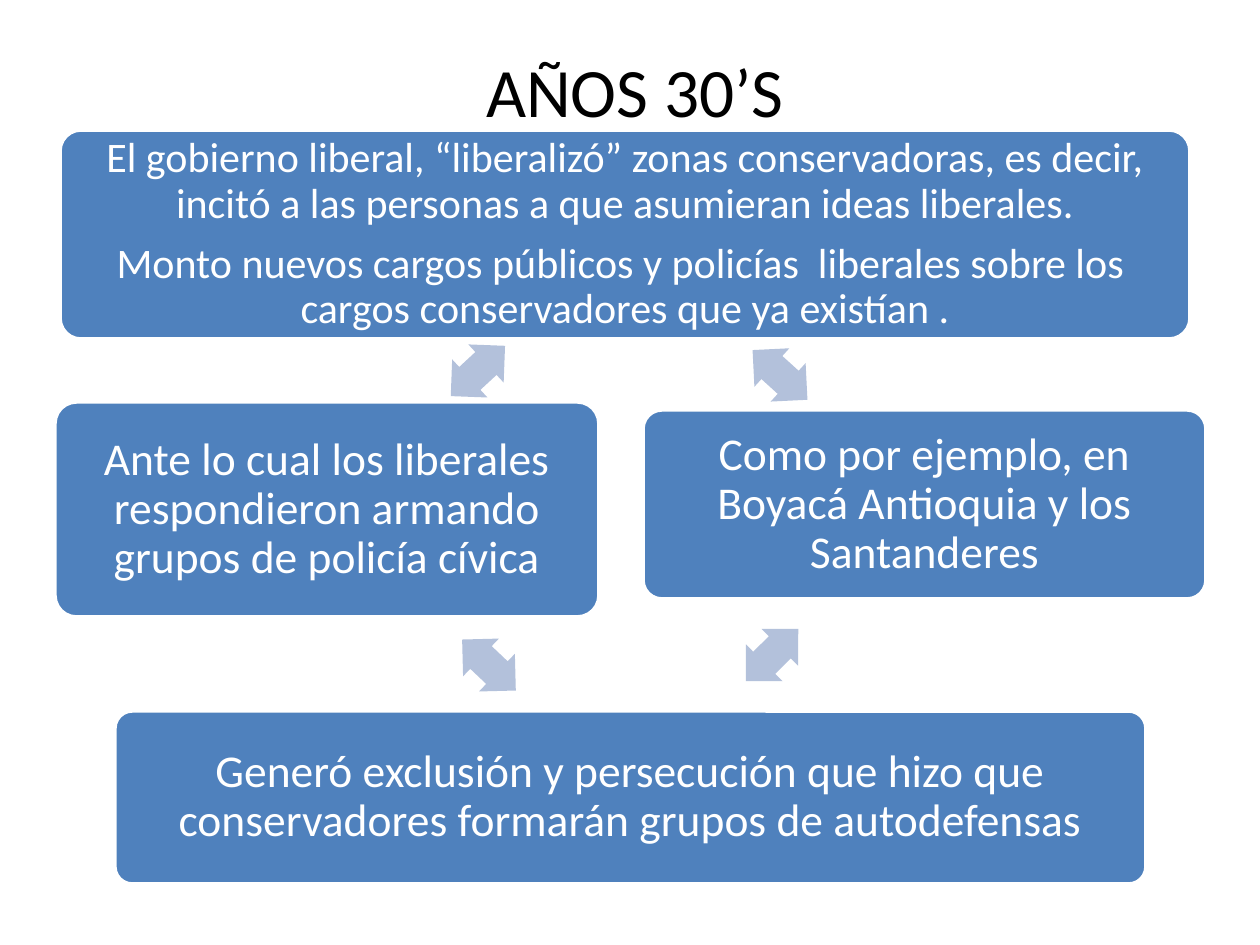
from pptx import Presentation
from pptx import util as u
from pptx.dml.color import RGBColor
from pptx.enum import shapes, text

PX = 914400 / 126
COLORS = {"box": "4F81BD", "arrow": "B3C1DB", "white": "FFFFFF", "title": "000000"}


def px(*values):
    return [u.Emu(round(v * PX)) for v in values]


def write(sp, paragraphs, size, color, margin):
    tf = sp.text_frame
    tf.word_wrap = True
    tf.vertical_anchor = text.MSO_ANCHOR.MIDDLE
    tf.margin_left = tf.margin_right = tf.margin_top = tf.margin_bottom = px(margin)[0]
    for i, line in enumerate(paragraphs):
        p = tf.add_paragraph() if i else tf.paragraphs[0]
        p.text = line
        p.alignment = text.PP_ALIGN.CENTER
        p.line_spacing = 0.9
        p.space_before = u.Pt(8.4 if i else 0)
        p.font.name = "Calibri"
        p.font.size = u.Pt(size)
        p.font.color.rgb = RGBColor.from_string(COLORS[color])


prs = Presentation()
prs.slide_width, prs.slide_height = px(1260, 945)
s = prs.slides.add_slide(prs.slide_layouts[6])

# Title
title = s.shapes.add_textbox(*px(164, 55, 942, 69))
write(title, ["AÑOS 30’S"], 39.6, "title", 0)
title.text_frame.paragraphs[0].line_spacing = 1.0

# Boxes of the cycle: left, top, width, height, size, paragraphs
boxes = [
    (60, 130, 1130, 209, 24, [
        "El gobierno liberal, “liberalizó” zonas conservadoras, es decir, "
        "incitó a las personas a que asumieran ideas liberales.",
        "Monto nuevos cargos públicos y policías  liberales sobre los  "
        "cargos conservadores que ya existían ."]),
    (643, 410, 563, 189, 26, ["Como por ejemplo, en Boyacá Antioquia y los Santanderes"]),
    (115, 711, 1031, 173, 26, [
        "Generó exclusión y persecución que hizo que "
        "conservadores formarán grupos de autodefensas"]),
    (55, 402, 544, 215, 26, [
        "Ante lo cual los liberales respondieron armando grupos de policía cívica"]),
]
for left, top, width, height, size, paragraphs in boxes:
    sp = s.shapes.add_shape(shapes.MSO_SHAPE.ROUNDED_RECTANGLE, *px(left, top, width, height))
    sp.adjustments[0] = 0.1
    sp.shadow.inherit = False
    sp.fill.solid()
    sp.fill.fore_color.rgb = RGBColor.from_string(COLORS["box"])
    sp.line.color.rgb = RGBColor.from_string(COLORS["white"])
    sp.line.width = u.Pt(2)
    write(sp, paragraphs, size, "white", 8)

# Double arrows between the boxes: left, top, rotation
for left, top, angle in [(743, 349, 42.2), (735, 629, 135.2), (452, 639, 223.5), (441, 345, 317.2)]:
    sp = s.shapes.add_shape(shapes.MSO_SHAPE.LEFT_RIGHT_ARROW, *px(left, top, 74, 52))
    sp.adjustments[0], sp.adjustments[1] = 0.6, 0.5
    sp.rotation = angle
    sp.shadow.inherit = False
    sp.fill.solid()
    sp.fill.fore_color.rgb = RGBColor.from_string(COLORS["arrow"])
    sp.line.fill.background()

prs.save("out.pptx")
